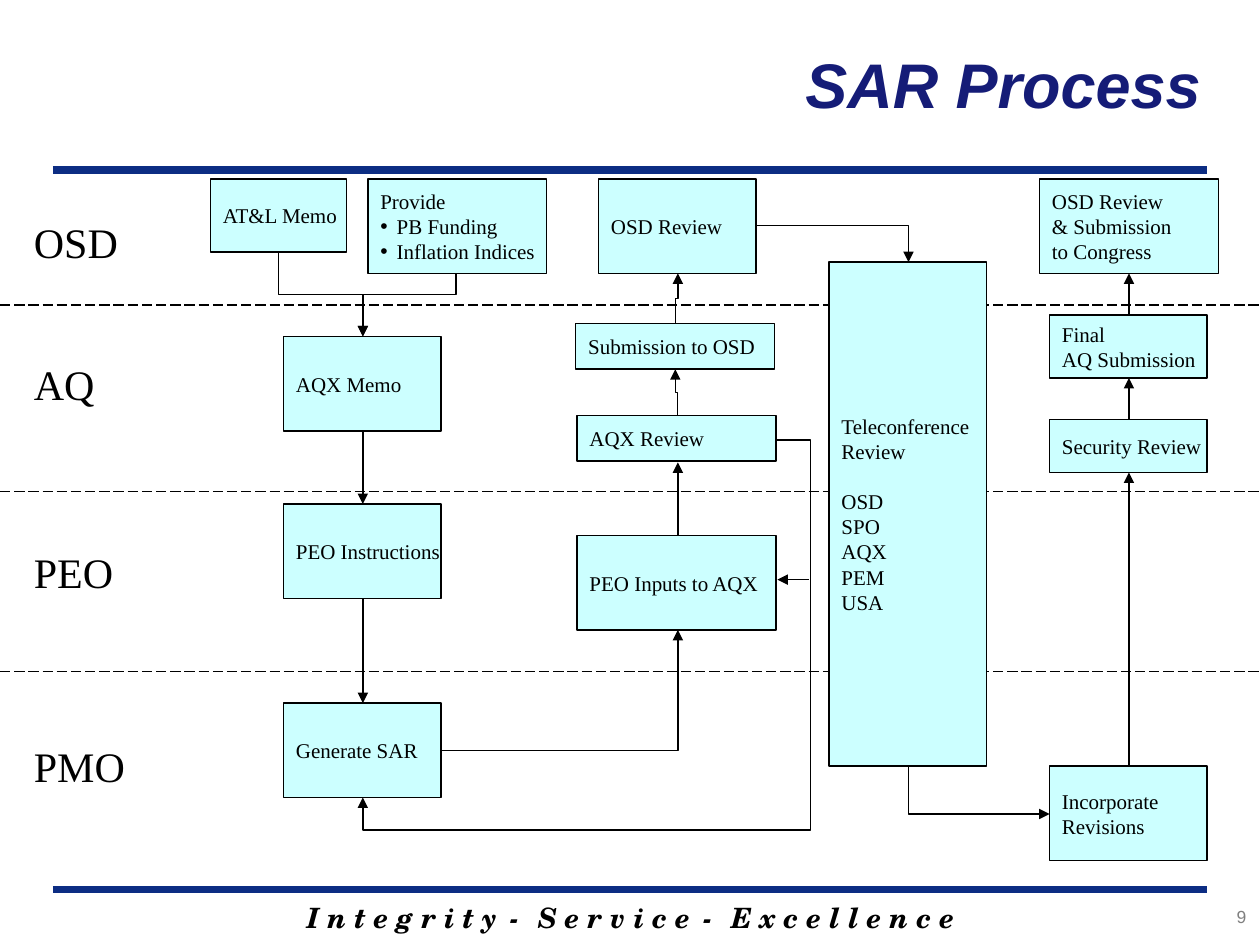
from typing import NamedTuple

from lxml.etree import SubElement
from pptx import Presentation
from pptx.dml.color import RGBColor
from pptx.enum.dml import MSO_LINE as Dash
from pptx.enum.shapes import MSO_CONNECTOR as Link, MSO_SHAPE as Preset
from pptx.enum.text import MSO_ANCHOR as Anchor, PP_ALIGN as Align
from pptx.oxml.ns import qn
from pptx.util import Inches, Pt

BLACK, NAVY, CYAN = "000000", "0C2D83", "CCFFFF"
SERIF = "Times New Roman"
LEFT, MID, RIGHT = 2.88, 5.38, 8.96  # column centres


class Style(NamedTuple):
    size: float
    font: str = SERIF
    color: str = BLACK
    strong: bool = False  # bold italic


class Box(NamedTuple):
    x: float
    y: float
    w: float
    h: float
    lines: list[str]
    bullets: bool = False  # every line after the first
    gap: int = -1  # line that starts a new block


class Elbow(NamedTuple):
    start: tuple[float, float]
    end: tuple[float, float]
    bends: int
    upright: bool = False  # leaves its start vertically
    adj: tuple[float, ...] = ()
    width: float = 0.75


BODY, LABEL = Style(12), Style(24)
TITLE = Style(36, "Arial", "151C77", True)
MOTTO = Style(16, "TeX Gyre Schola", BLACK, True)
PAGE = Style(10, "Arial", "7F7F7F")

LANES = [("OSD", 1.67), ("AQ", 2.8), ("PEO", 4.29), ("PMO", 5.83)]
BORDERS = [2.42, 3.9, 5.33]

BOXES = [
    Box(1.67, 1.42, 1.08, 0.58, ["AT&L Memo"]),
    Box(2.92, 1.42, 1.42, 0.75,
        ["Provide", "PB Funding", "Inflation Indices"], bullets=True),
    Box(2.25, 2.67, 1.25, 0.75, ["AQX Memo"]),
    Box(2.25, 4, 1.25, 0.75, ["PEO Instructions"]),
    Box(2.25, 5.58, 1.25, 0.75, ["Generate SAR"]),
    Box(4.75, 1.42, 1.25, 0.75, ["OSD Review"]),
    Box(4.57, 2.57, 1.58, 0.36, ["Submission to OSD"]),
    Box(4.58, 3.3, 1.58, 0.36, ["AQX Review"]),
    Box(4.58, 4.25, 1.58, 0.75, ["PEO Inputs to AQX"]),
    Box(6.58, 2.08, 1.25, 4, ["Teleconference", "Review", "OSD", "SPO",
                              "AQX", "PEM", "USA"], gap=2),
    Box(8.25, 1.42, 1.42, 0.75, ["OSD Review", "& Submission", "to Congress"]),
    Box(8.33, 2.5, 1.25, 0.5, ["Final", "AQ Submission"]),
    Box(8.33, 3.33, 1.25, 0.42, ["Security Review"]),
    Box(8.33, 6.08, 1.25, 0.75, ["Incorporate", "Revisions"]),
]

ARROWS = [
    ((LEFT, 3.42), (LEFT, 4)),
    ((LEFT, 4.75), (LEFT, 5.58)),
    ((MID, 4.25), (MID, 3.67)),
    ((RIGHT, 6.08), (RIGHT, 3.75)),
    ((RIGHT, 3.33), (RIGHT, 3)),
    ((RIGHT, 2.5), (RIGHT, 2.17)),
    ((6.42, 4.6), (6.17, 4.6)),
]

ELBOWS = [
    Elbow((2.21, 2), (LEFT, 2.67), 2, True, (0.5,)),
    Elbow((3.62, 2.17), (LEFT, 2.67), 2, True, (0.33,)),
    Elbow((3.5, 5.96), (MID, 5), 1),
    Elbow((MID, 3.3), (5.36, 2.93), 2, True, (0.5,)),
    Elbow((5.36, 2.57), (MID, 2.17), 2, True, (0.5,)),
    Elbow((6, 1.79), (7.21, 2.08), 1),
    Elbow((7.21, 6.08), (8.33, 6.46), 1, True),
    Elbow((6.17, 3.49), (LEFT, 6.33), 3, False, (-0.08, 1.09), 1),
]


def rgb(code: str) -> RGBColor:
    return RGBColor.from_string(code)


def add_run(para, text: str, style: Style):
    run = para.add_run()
    run.text = text
    font = run.font
    font.size, font.name = Pt(style.size), style.font
    font.bold = font.italic = style.strong
    font.color.rgb = rgb(style.color)
    return run


def add_label(slide, x: float, y: float, w: float, h: float, text: str,
              style: Style, align=Align.LEFT, anchor=Anchor.TOP):
    frame = slide.shapes.add_textbox(*map(Inches, (x, y, w, h))).text_frame
    frame.word_wrap, frame.vertical_anchor = True, anchor
    para = frame.paragraphs[0]
    para.alignment = align
    if text:
        add_run(para, text, style)
    return para


def add_motto(slide) -> None:
    """Spaced-out words, with dashes tracked wider than the letters."""
    para = add_label(slide, 1.42, 7.1, 7.17, 0.37, "", MOTTO, Align.CENTER)
    for i, word in enumerate(("Integrity", "Service", "Excellence")):
        if i:
            dash = add_run(para, " - ", MOTTO)
            dash.font._element.set("spc", "300")
        add_run(para, " ".join(word), MOTTO)


def add_bullet(para) -> None:
    props = para._p.get_or_add_pPr()
    props.set("marL", str(Inches(0.13)))
    props.set("indent", str(Inches(-0.13)))
    SubElement(props, qn("a:buFont"), typeface="Arial")
    SubElement(props, qn("a:buChar"), char="•")


def add_box(slide, box: Box) -> None:
    shape = slide.shapes.add_shape(Preset.RECTANGLE, *map(Inches, box[:4]))
    shape.shadow.inherit = False
    shape.fill.solid()
    shape.fill.fore_color.rgb = rgb(CYAN)
    shape.line.color.rgb = rgb(BLACK)
    shape.line.width = Pt(0.75)
    frame = shape.text_frame
    frame.word_wrap, frame.vertical_anchor = False, Anchor.MIDDLE
    for i, text in enumerate(box.lines):
        para = frame.add_paragraph() if i else frame.paragraphs[0]
        para.alignment = Align.LEFT
        if i == box.gap:
            para.space_before = Pt(14)
        if box.bullets and i:
            add_bullet(para)
        add_run(para, text, BODY)


def add_line(slide, start, end, color=BLACK, width=0.75, dash=None,
             head=False, kind=Link.STRAIGHT):
    line = slide.shapes.add_connector(kind, *map(Inches, (*start, *end)))
    line.line.color.rgb = rgb(color)
    line.line.width = Pt(width)
    if dash:
        line.line.dash_style = dash
    props = line._element.spPr
    if head:
        SubElement(props.find(qn("a:ln")), qn("a:tailEnd"), type="triangle")
    SubElement(props, qn("a:effectLst"))
    return line


def add_elbow(slide, elbow: Elbow) -> None:
    """Draw a bent arrow; an upright one is a level one turned on its centre."""
    (x1, y1), (x2, y2) = start, end = elbow.start, elbow.end
    turn = 0
    if elbow.upright:
        side = 1 if x2 < x1 else -1
        turn = 90 if side > 0 else 270
        cx, cy = (x1 + x2) / 2, (y1 + y2) / 2
        dx, dy = side * (y2 - y1) / 2, side * (x1 - x2) / 2
        start, end = (cx - dx, cy - dy), (cx + dx, cy + dy)
    line = add_line(slide, start, end, width=elbow.width, head=True,
                    kind=Link.ELBOW)
    props = line._element.spPr
    if turn:
        props.find(qn("a:xfrm")).set("rot", str(turn * 60000))
    geom = props.find(qn("a:prstGeom"))
    geom.set("prst", f"bentConnector{elbow.bends + 1}")
    for i, part in enumerate(elbow.adj, 1):
        SubElement(geom.find(qn("a:avLst")), qn("a:gd"), name=f"adj{i}",
                   fmla=f"val {round(part * 100000)}")


def main() -> None:
    deck = Presentation()
    deck.slide_width, deck.slide_height = Inches(10), Inches(7.5)
    slide = deck.slides.add_slide(deck.slide_layouts[6])
    add_motto(slide)
    for y in (7.06, 1.35):
        add_line(slide, (0.42, y), (9.58, y), NAVY, 4.5)
    add_label(slide, 8.74, 7.14, 1.25, 0.33, "9", PAGE, Align.RIGHT)
    add_label(slide, 3.38, 0, 6.25, 1.33, "SAR Process", TITLE,
              Align.RIGHT, Anchor.MIDDLE)
    for y in BORDERS:
        add_line(slide, (0, y), (10, y), dash=Dash.LONG_DASH)
    for name, y in LANES:
        add_label(slide, 0.17, y, 0.99, 0.5, name, LABEL)
    for box in BOXES:
        add_box(slide, box)
    for start, end in ARROWS:
        add_line(slide, start, end, head=True)
    for elbow in ELBOWS:
        add_elbow(slide, elbow)
    deck.save("out.pptx")


if __name__ == "__main__":
    main()
